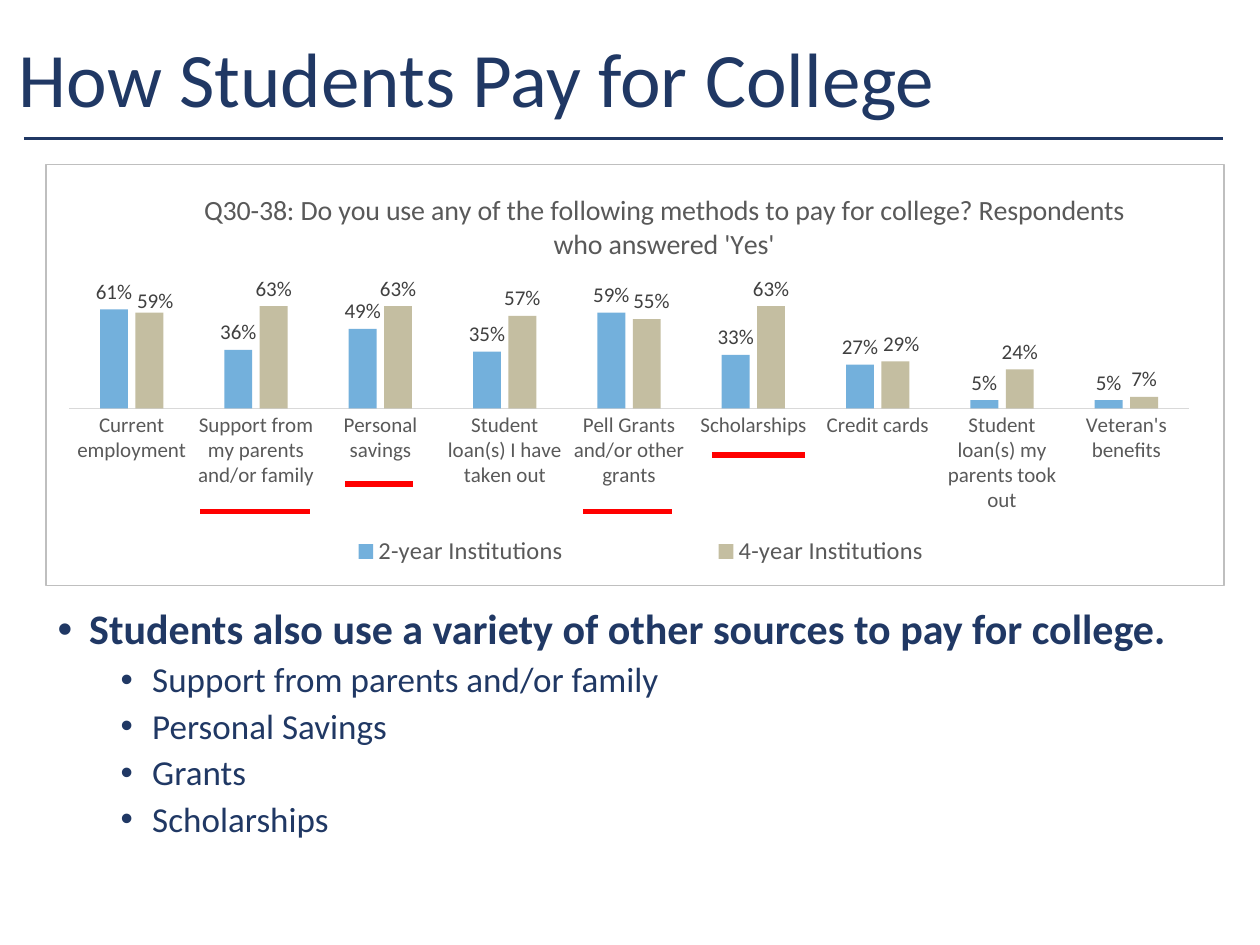
from lxml.etree import SubElement
from pptx import Presentation
from pptx.chart.data import CategoryChartData
from pptx.dml.color import RGBColor
from pptx.enum.chart import XL_CHART_TYPE as ChartType
from pptx.enum.chart import XL_LABEL_POSITION as LabelPosition
from pptx.enum.chart import XL_LEGEND_POSITION as LegendPosition
from pptx.enum.chart import XL_TICK_LABEL_POSITION as TickLabels
from pptx.enum.chart import XL_TICK_MARK as TickMark
from pptx.enum.shapes import MSO_CONNECTOR as Connector
from pptx.enum.text import MSO_ANCHOR as Anchor
from pptx.oxml import parse_xml
from pptx.oxml.ns import nsdecls, qn
from pptx.util import Inches, Pt

COLUMNS, ROWS = 100, 75
WIDTH, HEIGHT = Inches(10), Inches(7.5)
FONT, NAVY, GREY, RED = "Calibri", "203864", "595959", "FF0000"
PERCENT = '0"%"'

METHODS = [
    "Current employment", "Support from my parents and/or family",
    "Personal savings", "Student loan(s) I have taken out",
    "Pell Grants and/or other grants", "Scholarships", "Credit cards",
    "Student loan(s) my parents took out", "Veteran's benefits",
]
# name, values, colour, label shifts by point as shares of the chart
SERIES = [
    ("2-year Institutions", [61, 36, 49, 35, 59, 33, 27, 5, 5], "0070C0", {}),
    ("4-year Institutions", [59, 63, 63, 57, 55, 63, 29, 24, 7], "948A54",
     {0: (0.005, 0.015), 4: (0.004, 0), 6: (0.005, 0)}),
]
QUESTION = ("Q30-38: Do you use any of the following methods to pay for "
            "college? Respondents who answered 'Yes'")
SOURCES = ["Support from parents and/or family", "Personal Savings",
           "Grants", "Scholarships"]
# left column, right column, row
UNDERLINES = [(15.9, 24.6, 40.6), (46.3, 53.3, 40.6),
              (27.4, 32.8, 38.4), (56.5, 63.9, 36.1)]


def col(count):
    return round(WIDTH * count / COLUMNS)


def row(count):
    return round(HEIGHT * count / ROWS)


def area(left, top, width, height):
    return col(left), row(top), col(width), row(height)


def rgb(value):
    return RGBColor.from_string(value)


def set_font(font, size, color, bold=False):
    font.name, font.size, font.bold = FONT, Pt(size), bold
    font.color.rgb = rgb(color)


def add_text_box(page, place, anchor=Anchor.TOP):
    frame = page.shapes.add_textbox(*area(*place)).text_frame
    frame.word_wrap = True
    frame.vertical_anchor = anchor
    return frame


def write(para, text, size, bold=False, before=0, bullet_at=None):
    """Fill a paragraph; bullet_at is the bullet's indent in columns."""
    if bullet_at is not None:
        hang = col(2.5)
        props = para._p.get_or_add_pPr()
        props.set("marL", str(col(bullet_at) + hang))
        props.set("indent", str(-hang))
        SubElement(props, qn("a:buFont"), typeface="Arial")
        SubElement(props, qn("a:buChar"), char="•")
    para.line_spacing = 0.9
    para.space_before = Pt(before)
    span = para.add_run()
    span.text = text
    set_font(span.font, size, NAVY, bold)


def add_rule(page, left, right, level, color, weight):
    line = page.shapes.add_connector(
        Connector.STRAIGHT, col(left), row(level), col(right), row(level))
    line.line.color.rgb = rgb(color)
    line.line.width = Pt(weight)
    SubElement(line._element.spPr, qn("a:effectLst"))


def set_layout(element, index, **shares):
    """Place a chart part by hand, in shares of the chart's size."""
    for old in element.findall(qn("c:layout")):
        element.remove(old)
    layout = parse_xml(f"<c:layout {nsdecls('c')}><c:manualLayout/></c:layout>")
    for name, value in shares.items():
        SubElement(layout[0], qn(f"c:{name}"), val=str(value))
    element.insert(index, layout)


def style_series(series, color, shifts):
    fill = series.format.fill
    fill.solid()
    fill.fore_color.rgb = rgb(color)
    tint = series._element.spPr.find(".//" + qn("a:srgbClr"))
    SubElement(tint, qn("a:alpha"), val="55000")
    series.invert_if_negative = False
    labels = series.data_labels
    labels.show_value = True
    labels.number_format = PERCENT
    labels.number_format_is_linked = False
    labels.position = LabelPosition.OUTSIDE_END
    set_font(labels.font, 12, "404040")
    for point, (x, y) in shifts.items():
        label = series.points[point].data_label
        set_font(label.font, 12, "404040")
        label.position = LabelPosition.OUTSIDE_END
        element = labels._element.findall(qn("c:dLbl"))[-1]
        set_layout(element, 1, x=x, y=y)


def style_axes(chart):
    methods, values = chart.category_axis, chart.value_axis
    for axis in (methods, values):
        axis.major_tick_mark = axis.minor_tick_mark = TickMark.NONE
        axis.has_major_gridlines = False
    set_font(methods.tick_labels.font, 12, GREY)
    methods.format.line.color.rgb = rgb("D9D9D9")
    methods.format.line.width = Pt(0.75)
    values.minimum_scale, values.maximum_scale = 0, 70
    values.tick_label_position = TickLabels.NONE
    values.format.line.fill.background()


def add_border(chart, color, weight):
    border = parse_xml(
        f"<c:spPr {nsdecls('c', 'a')}><a:noFill/><a:ln w='{Pt(weight)}'>"
        f"<a:solidFill><a:srgbClr val='{color}'/></a:solidFill></a:ln></c:spPr>")
    chart._chartSpace.find(qn("c:chart")).addnext(border)


def add_payment_chart(page, place):
    data = CategoryChartData(number_format=PERCENT)
    data.categories = METHODS
    for name, values, _, _ in SERIES:
        data.add_series(name, values)
    chart = page.shapes.add_chart(
        ChartType.COLUMN_CLUSTERED, *area(*place), data).chart
    set_font(chart.font, 10, "000000")
    add_border(chart, "BFBFBF", 0.75)

    title = chart.chart_title
    title.text_frame.text = QUESTION
    set_font(title.text_frame.paragraphs[0].runs[0].font, 16, GREY)
    title.include_in_layout = False
    set_layout(title._element, 1, xMode="edge", yMode="edge", x=0.13, y=0.05)

    chart.has_legend = True
    legend = chart.legend
    legend.position = LegendPosition.BOTTOM
    legend.include_in_layout = False
    set_font(legend.font, 14, GREY)
    set_layout(legend._element, 1, xMode="edge", yMode="edge",
               x=0.14, y=0.87, w=0.73, h=0.1)

    plot = chart.plots[0]
    plot.gap_width, plot.overlap, plot.vary_by_categories = 219, -27, False
    set_layout(chart._chartSpace.chart.plotArea, 0, layoutTarget="inner",
               xMode="edge", yMode="edge", x=0.02, y=0.31, w=0.95, h=0.27)
    style_axes(chart)
    for series, (_, _, color, shifts) in zip(plot.series, SERIES):
        style_series(series, color, shifts)


def main():
    deck = Presentation()
    deck.slide_width, deck.slide_height = WIDTH, HEIGHT
    page = deck.slides.add_slide(deck.slide_layouts[6])

    add_rule(page, 1.9, 97.1, 11, NAVY, 1.75)
    title = add_text_box(page, (0.5, 2.2, 86.2, 8.7), Anchor.MIDDLE)
    write(title.paragraphs[0], "How Students Pay for College", 44)

    body = add_text_box(page, (3.6, 47.8, 95.2, 20.4))
    write(body.paragraphs[0],
          "Students also use a variety of other sources to pay for college.",
          24, bold=True, bullet_at=0)
    for source in SOURCES:
        para = body.add_paragraph()
        para.level = 1
        write(para, source, 20, before=5, bullet_at=5)

    add_payment_chart(page, (3.6, 13, 93.6, 33.5))
    for left, right, level in UNDERLINES:
        add_rule(page, left, right, level, RED, 3.25)

    deck.save("out.pptx")


if __name__ == "__main__":
    main()
